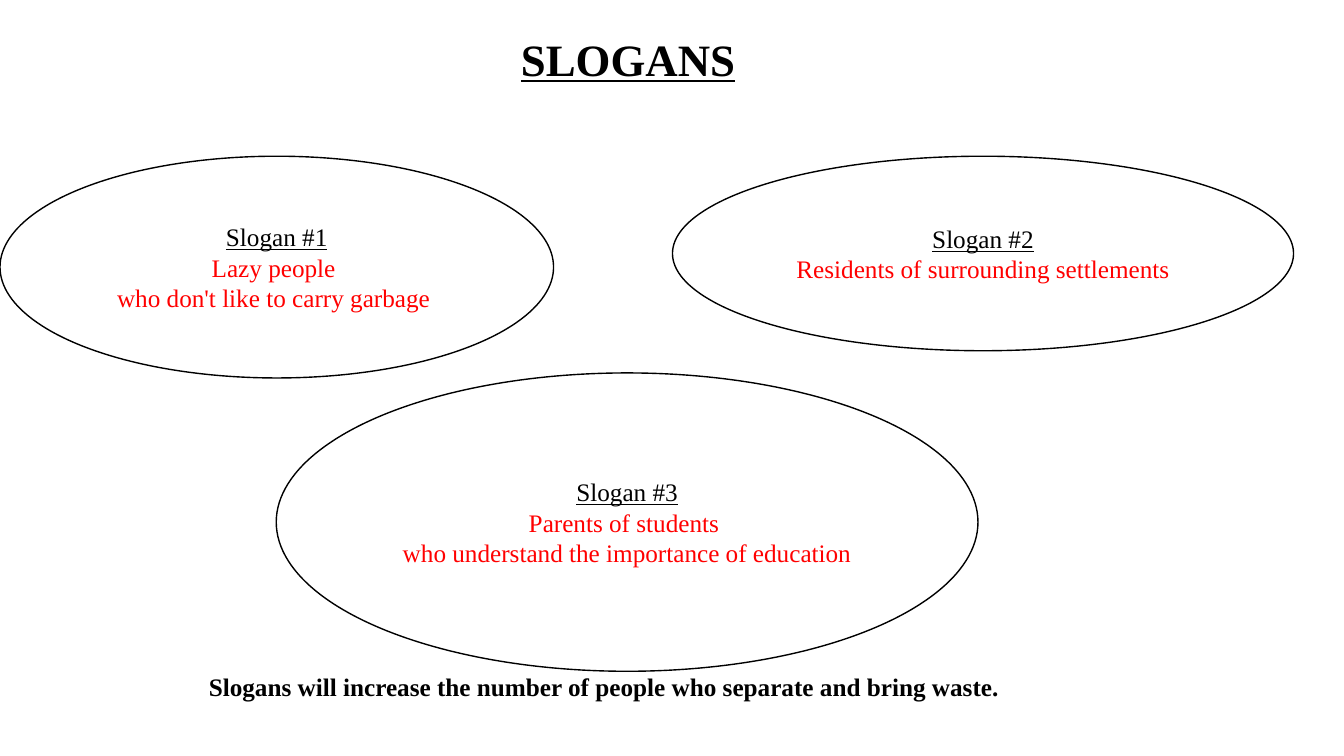
from dataclasses import dataclass

from pptx import Presentation
from pptx.dml.color import RGBColor
from pptx.enum.shapes import MSO_SHAPE
from pptx.enum.text import MSO_ANCHOR, PP_ALIGN
from pptx.util import Inches, Pt

OVAL = MSO_SHAPE.OVAL
CENTER = PP_ALIGN.CENTER
TOP, MIDDLE, BOTTOM = MSO_ANCHOR.TOP, MSO_ANCHOR.MIDDLE, MSO_ANCHOR.BOTTOM


@dataclass(frozen=True)
class Theme:
    """Colours, font and type sizes of the slide."""
    ink: RGBColor = RGBColor(0, 0, 0)
    paper: RGBColor = RGBColor(255, 255, 255)
    audience: RGBColor = RGBColor(255, 0, 0)
    font: str = "Times New Roman"
    title_size: int = 32
    body_size: int = 18
    outline: int = 1


THEME = Theme()

SLOGANS = [
    ((0, 1.55, 5.49, 2.2), "Slogan #1",
     ["Lazy people ", "who don't like to carry garbage "]),
    ((6.67, 1.55, 6.16, 1.93), "Slogan #2",
     ["Residents of surrounding settlements"]),
    ((2.74, 3.7, 6.96, 2.96), "Slogan #3",
     ["Parents of students ", "who understand the importance of education"]),
]


def write(paragraph, text, *, size=THEME.body_size, color=THEME.ink,
          bold=False, underline=False, spacing=1.0):
    """Put formatted, centred text into a paragraph."""
    paragraph.alignment = CENTER
    paragraph.line_spacing = spacing
    run = paragraph.add_run()
    run.text = text
    run.font.name = THEME.font
    run.font.size = Pt(size)
    run.font.bold = bold
    run.font.underline = underline
    run.font.color.rgb = color


def add_label(slide, box, text, anchor=TOP, **text_format):
    """Add a wrapping text box with one line of bold text."""
    frame = slide.shapes.add_textbox(*map(Inches, box)).text_frame
    frame.word_wrap = True
    frame.vertical_anchor = anchor
    write(frame.paragraphs[0], text, bold=True, **text_format)


def add_slogan(slide, box, heading, audience_lines):
    """Add an outlined oval with a slogan heading and its audience."""
    oval = slide.shapes.add_shape(OVAL, *map(Inches, box))
    oval.shadow.inherit = False
    oval.fill.solid()
    oval.fill.fore_color.rgb = THEME.paper
    oval.line.color.rgb = THEME.ink
    oval.line.width = Pt(THEME.outline)
    frame = oval.text_frame
    frame.word_wrap = True
    frame.vertical_anchor = MIDDLE
    write(frame.paragraphs[0], heading, underline=True)
    for line in audience_lines:
        write(frame.add_paragraph(), line, color=THEME.audience)


def main():
    """Build the slogans slide and save it."""
    deck = Presentation()
    deck.slide_width, deck.slide_height = Inches(13.33), Inches(7.5)
    slide = deck.slides.add_slide(deck.slide_layouts[6])
    add_label(slide, (1.23, 0.29, 10, 0.61), "SLOGANS", anchor=BOTTOM,
              size=THEME.title_size, underline=True, spacing=0.9)
    for box, heading, audience_lines in SLOGANS:
        add_slogan(slide, box, heading, audience_lines)
    add_label(slide, (1.7, 6.61, 8.58, 0.4),
              "Slogans will increase the number of people who separate and bring waste.")
    deck.save("out.pptx")


if __name__ == "__main__":
    main()
